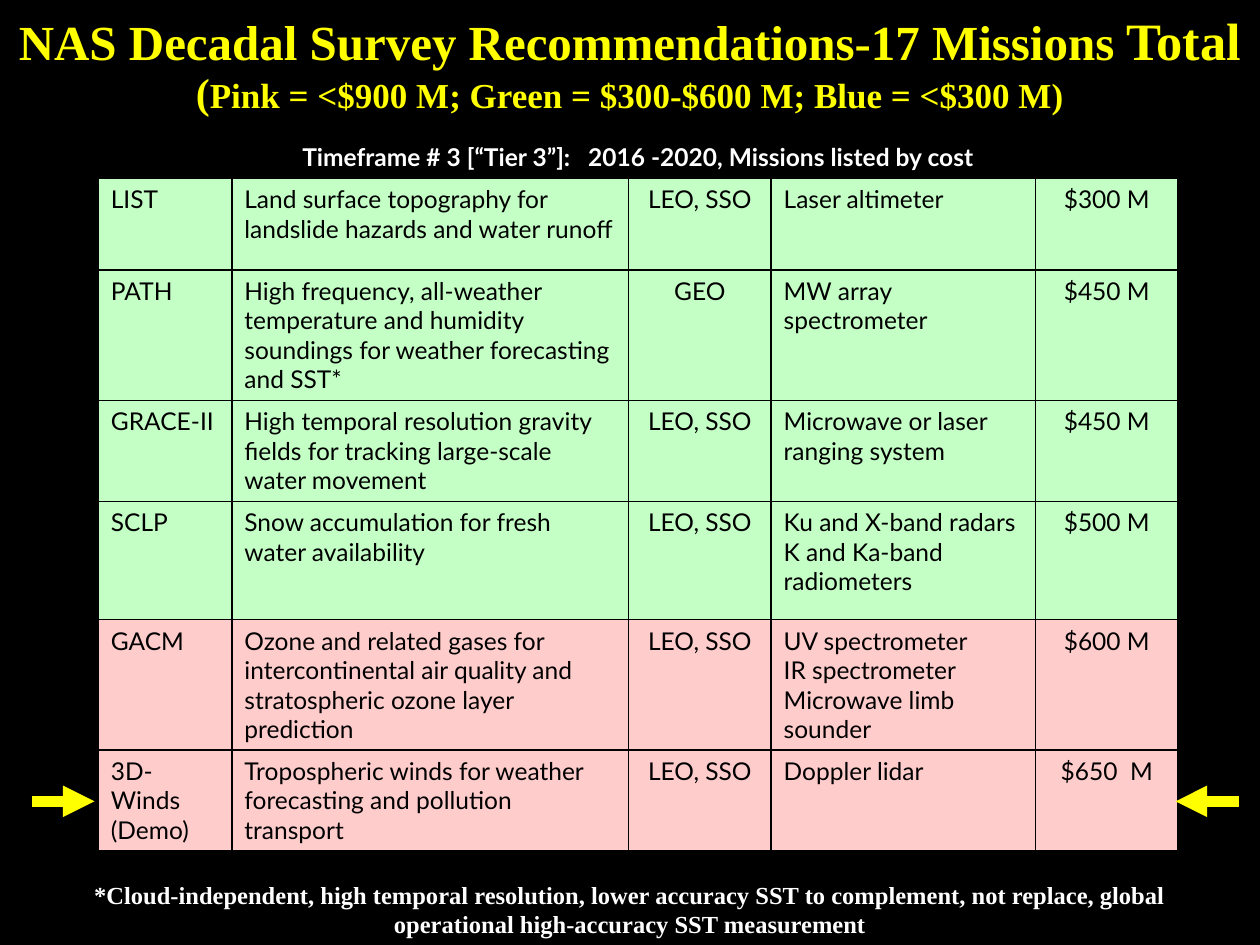
from typing import NamedTuple

from lxml.etree import SubElement
from pptx import Presentation
from pptx.dml.color import RGBColor
from pptx.enum.shapes import MSO_CONNECTOR
from pptx.enum.text import MSO_ANCHOR, MSO_AUTO_SIZE, PP_ALIGN
from pptx.oxml.ns import qn
from pptx.util import Inches, Pt

COLORS = {
    "background": "000000",
    "border": "000000",
    "body": "000000",
    "accent": "FFFF00",
    "light": "FFFFFF",
    "green": "C4FFC6",
    "pink": "FFCCCC",
}
SERIF, SANS = "Times New Roman", "Lato"


class Mission(NamedTuple):
    name: str
    goal: str
    orbit: str
    instruments: str
    cost: str
    tier: str
    height: float


class Arrow(NamedTuple):
    start: float
    end: float


MISSIONS = [
    Mission("LIST", "Land surface topography for landslide hazards and water runoff",
            "LEO, SSO", "Laser altimeter", "$300 M", "green", 0.73),
    Mission("PATH", "High frequency, all-weather temperature and humidity soundings "
            "for weather forecasting and SST*",
            "GEO", "MW array spectrometer", "$450 M", "green", 0.94),
    Mission("GRACE-II", "High temporal resolution gravity fields for tracking "
            "large-scale water movement",
            "LEO, SSO", "Microwave or laser ranging system", "$450 M", "green", 0.74),
    Mission("SCLP", "Snow accumulation for fresh water availability",
            "LEO, SSO", "Ku and X-band radars\nK and Ka-band radiometers",
            "$500 M", "green", 0.94),
    Mission("GACM", "Ozone and related gases for intercontinental air quality and "
            "stratospheric ozone layer prediction",
            "LEO, SSO", "UV spectrometer\nIR spectrometer\nMicrowave limb sounder",
            "$600 M", "pink", 0.94),
    Mission("3D-Winds\n(Demo)", "Tropospheric winds for weather forecasting and "
            "pollution transport",
            "LEO, SSO", "Doppler lidar", "$650  M", "pink", 0.73),
]
COLUMN_WIDTHS = [1.06, 3.15, 1.13, 2.1, 1.13]
COLUMN_ALIGNS = [PP_ALIGN.LEFT, PP_ALIGN.LEFT, PP_ALIGN.CENTER, PP_ALIGN.LEFT, PP_ALIGN.CENTER]
HEADER_HEIGHT = 0.33
ARROWS = [Arrow(9.83, 9.33), Arrow(0.25, 0.75)]
ARROW_Y = 6.36


def color(key: str) -> RGBColor:
    return RGBColor.from_string(COLORS[key])


def add_run(paragraph, text: str, size: float, font: str, ink: str, bold: bool = True) -> None:
    run = paragraph.add_run()
    run.text = text
    run.font.size = Pt(size)
    run.font.name = font
    run.font.bold = bold
    run.font.color.rgb = color(ink)


def write_lines(frame, text: str, align, font: str, ink: str, bold: bool = True) -> None:
    for index, line in enumerate(text.split("\n")):
        paragraph = frame.add_paragraph() if index else frame.paragraphs[0]
        paragraph.alignment = align
        add_run(paragraph, line, 14, font, ink, bold)


def set_borders(cell) -> None:
    properties = cell._tc.get_or_add_tcPr()
    for index, side in enumerate(("lnL", "lnR", "lnT", "lnB")):
        border = properties.makeelement(qn(f"a:{side}"), {"w": str(Pt(1))})
        fill = SubElement(border, qn("a:solidFill"))
        SubElement(fill, qn("a:srgbClr"), val=COLORS["border"])
        properties.insert(index, border)


def add_title(slide) -> None:
    title = slide.shapes.title
    title.left, title.top, title.width, title.height = map(Inches, (0, 0.07, 10, 0.91))
    frame = title.text_frame
    frame.vertical_anchor = MSO_ANCHOR.TOP
    frame.auto_size = MSO_AUTO_SIZE.NONE
    heading = frame.paragraphs[0]
    heading.alignment = PP_ALIGN.CENTER
    heading.line_spacing = 0.9
    heading.space_before = Pt(0)
    add_run(heading, "NAS Decadal Survey Recommendations-17 Missions", 28, SERIF, "accent")
    add_run(heading, " Total", 30, SERIF, "accent")
    heading.add_line_break()
    add_run(heading, "(", 24, SERIF, "accent")
    add_run(heading, "Pink = <$900 M; Green = $300-$600 M; Blue = <$300 M)", 20, SERIF, "accent")


def add_missions(slide) -> None:
    heights = [HEADER_HEIGHT] + [mission.height for mission in MISSIONS]
    missions = slide.shapes.add_table(
        len(heights), len(COLUMN_WIDTHS), Inches(0.78), Inches(1.08),
        Inches(sum(COLUMN_WIDTHS)), Inches(sum(heights))).table
    missions.first_row = missions.horz_banding = False
    for column, width in zip(missions.columns, COLUMN_WIDTHS):
        column.width = Inches(width)
    for row, height in zip(missions.rows, heights):
        row.height = Inches(height)

    # Timeframe across all columns
    timeframe = missions.cell(0, 0)
    timeframe.merge(missions.cell(0, len(COLUMN_WIDTHS) - 1))
    write_lines(timeframe.text_frame,
                "Timeframe # 3 [“Tier 3”]:   2016 -2020, Missions listed by cost",
                PP_ALIGN.CENTER, SANS, "light")
    for cell in missions.rows[0].cells:
        cell.fill.background()
        set_borders(cell)

    # One row per mission, filled by cost tier
    for row_number, mission in enumerate(MISSIONS, start=1):
        for column_number, align in enumerate(COLUMN_ALIGNS):
            cell = missions.cell(row_number, column_number)
            cell.fill.solid()
            cell.fill.fore_color.rgb = color(mission.tier)
            write_lines(cell.text_frame, mission[column_number], align, SANS, "body", False)
            set_borders(cell)


def add_footnote(slide) -> None:
    footnote = slide.shapes.add_textbox(Inches(0), Inches(6.93), Inches(10), Inches(0.57))
    frame = footnote.text_frame
    frame.word_wrap = True
    frame.vertical_anchor = MSO_ANCHOR.MIDDLE
    write_lines(frame,
                "*Cloud-independent, high temporal resolution, lower accuracy SST to "
                "complement, not replace, global\noperational high-accuracy SST measurement",
                PP_ALIGN.CENTER, SERIF, "light")


def add_arrow(slide, arrow: Arrow) -> None:
    pointer = slide.shapes.add_connector(
        MSO_CONNECTOR.STRAIGHT, Inches(arrow.start), Inches(ARROW_Y),
        Inches(arrow.end), Inches(ARROW_Y))
    pointer.line.color.rgb = color("accent")
    pointer.line.width = Pt(6)
    SubElement(pointer.line._get_or_add_ln(), qn("a:tailEnd"), type="triangle")
    SubElement(pointer._element.spPr, qn("a:effectLst"))


def main() -> None:
    deck = Presentation()
    deck.slide_width, deck.slide_height = Inches(10), Inches(7.5)
    slide = deck.slides.add_slide(deck.slide_layouts[5])
    slide.background.fill.solid()
    slide.background.fill.fore_color.rgb = color("background")

    add_footnote(slide)
    add_missions(slide)
    add_title(slide)
    for arrow in ARROWS:
        add_arrow(slide, arrow)
    deck.save("out.pptx")


if __name__ == "__main__":
    main()
